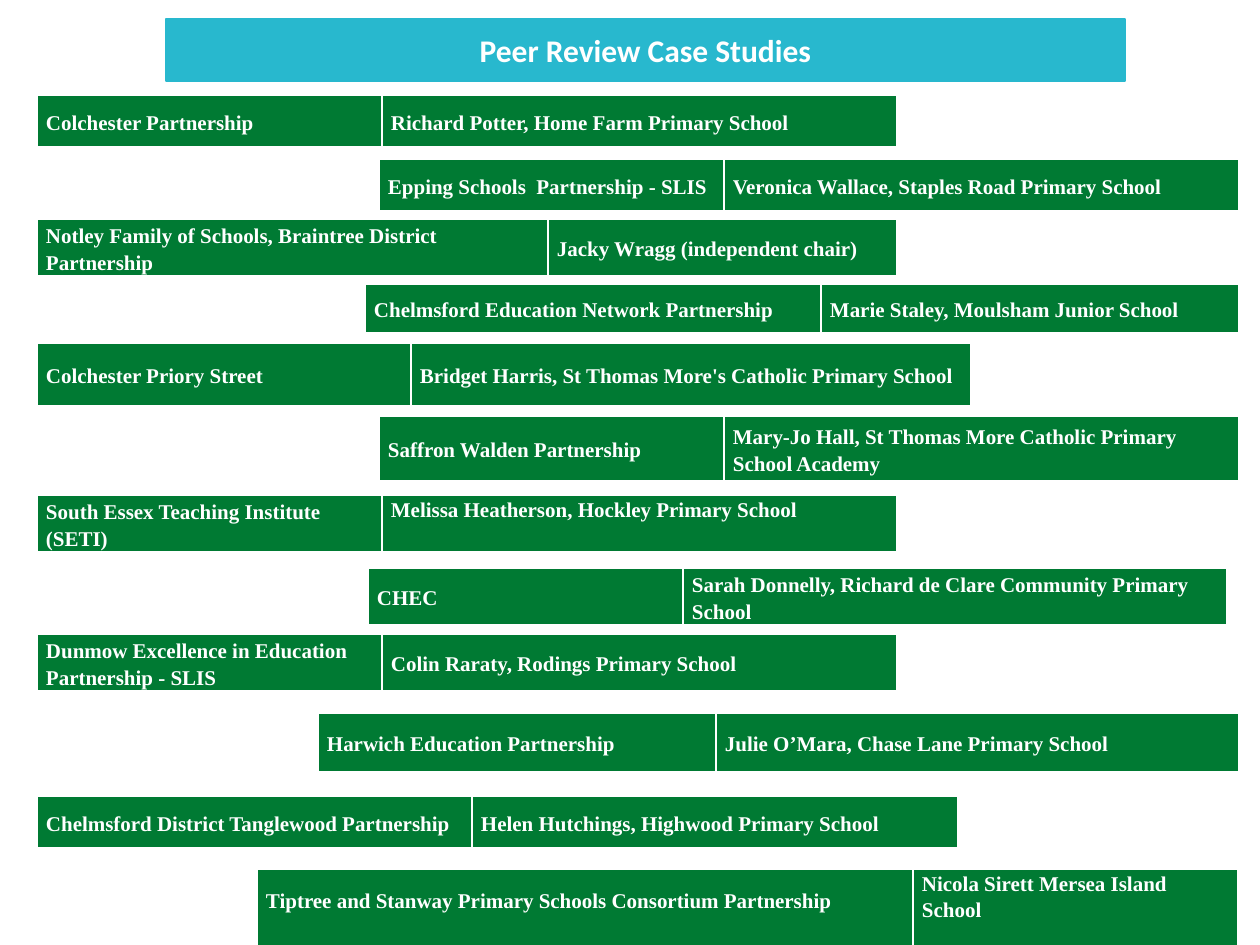
from lxml.etree import SubElement
from pptx import Presentation
from pptx.dml.color import RGBColor
from pptx.enum.text import MSO_ANCHOR, PP_ALIGN
from pptx.oxml.ns import qn
from pptx.util import Emu, Pt

WHITE = RGBColor(0xFF, 0xFF, 0xFF)
GREEN = RGBColor(0x00, 0x7A, 0x33)
TEAL = RGBColor(0x28, 0xB8, 0xCE)
LEFT_EDGE = 37
BORDERS = (("lnL", 1), ("lnR", 1), ("lnT", 1), ("lnB", 3))


def px(length):
    return Emu(round(length * 914400 / 126))


def add_text(paragraph, text, font_name, size):
    run = paragraph.add_run()
    run.text = text
    run.font.name = font_name
    run.font.size = Pt(size)
    run.font.bold = True
    run.font.color.rgb = WHITE


prs = Presentation()
prs.slide_width, prs.slide_height = px(1260), px(945)
slide = prs.slides.add_slide(prs.slide_layouts[5])

# Title in a rounded banner
title = slide.shapes.title
title.left, title.top, title.width, title.height = px(166), px(19), px(959), px(62)
geometry = SubElement(title._element.spPr, qn("a:prstGeom"), prst="roundRect")
SubElement(geometry, qn("a:avLst"))
title.fill.solid()
title.fill.fore_color.rgb = TEAL
title.line.color.rgb = TEAL
title.line.width = Pt(0.75)
title.text_frame.vertical_anchor = MSO_ANCHOR.MIDDLE
heading = title.text_frame.paragraphs[0]
heading.alignment = PP_ALIGN.CENTER
add_text(heading, "Peer Review Case Studies", "Calibri", 18)

# Case studies: left, top, column widths, height, partnership, reviewer
case_studies = [
    (LEFT_EDGE, 95, (345, 515), 53, "Colchester Partnership",
     "Richard Potter, Home Farm Primary School"),
    (379, 159, (345, 515), 53, "Epping Schools  Partnership - SLIS",
     "Veronica Wallace, Staples Road Primary School"),
    (LEFT_EDGE, 219, (511, 349), 58, "Notley Family of Schools, Braintree District Partnership",
     "Jacky Wragg (independent chair)"),
    (365, 284, (456, 418), 50, "Chelmsford Education Network Partnership",
     "Marie Staley, Moulsham Junior School"),
    (LEFT_EDGE, 343, (374, 560), 64, "Colchester Priory Street",
     "Bridget Harris, St Thomas More's Catholic Primary School"),
    (379, 416, (345, 515), 66, "Saffron Walden Partnership",
     "Mary-Jo Hall, St Thomas More Catholic Primary School Academy"),
    (LEFT_EDGE, 495, (345, 515), 58, "South Essex Teaching Institute (SETI)",
     "Melissa Heatherson, Hockley Primary School"),
    (368, 568, (315, 544), 58, "CHEC",
     "Sarah Donnelly, Richard de Clare Community Primary School"),
    (LEFT_EDGE, 634, (345, 515), 58, "Dunmow Excellence in Education Partnership - SLIS",
     "Colin Raraty, Rodings Primary School"),
    (318, 713, (398, 523), 60, "Harwich Education Partnership",
     "Julie O’Mara, Chase Lane Primary School"),
    (LEFT_EDGE, 796, (435, 486), 53, "Chelmsford District Tanglewood Partnership",
     "Helen Hutchings, Highwood Primary School"),
    (257, 869, (656, 325), 87, "Tiptree and Stanway Primary Schools Consortium Partnership",
     "Nicola Sirett Mersea Island School"),
]
top_aligned = ("Melissa Heatherson", "Nicola Sirett")
raised = "Tiptree and Stanway"

for left, top, widths, height, partnership, reviewer in case_studies:
    case_table = slide.shapes.add_table(
        1, 2, px(left), px(top), px(sum(widths)), px(height)).table
    case_table.first_row = False
    case_table.horz_banding = False
    case_table.rows[0].height = px(height)
    for column, (width, text) in enumerate(zip(widths, (partnership, reviewer))):
        case_table.columns[column].width = px(width)
        cell = case_table.cell(0, column)
        cell.margin_left = cell.margin_right = px(9)
        cell.margin_top = 0
        cell.margin_bottom = px(26) if text.startswith(raised) else 0
        cell.vertical_anchor = (
            MSO_ANCHOR.TOP if text.startswith(top_aligned) else MSO_ANCHOR.MIDDLE)

        # White borders, thicker below
        for side, weight in BORDERS:
            border = SubElement(
                cell._tc.get_or_add_tcPr(), qn(f"a:{side}"), w=str(Pt(weight)))
            SubElement(SubElement(border, qn("a:solidFill")), qn("a:srgbClr"), val=str(WHITE))
        cell.fill.solid()
        cell.fill.fore_color.rgb = GREEN

        line = cell.text_frame.paragraphs[0]
        line.line_spacing = 1.15
        add_text(line, text, "Times New Roman", 12)

prs.save("out.pptx")
